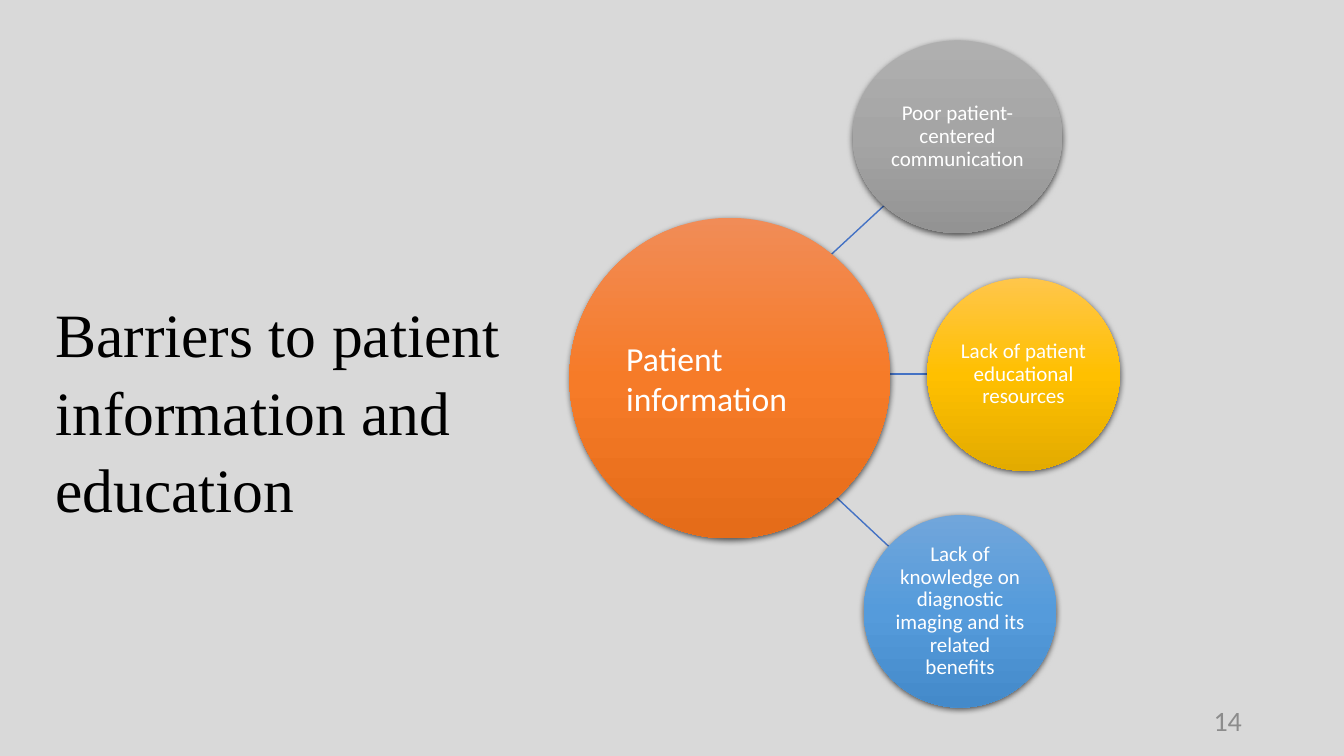
from lxml import etree
from pptx import Presentation
from pptx.dml.color import RGBColor
from pptx.enum import shapes, text
from pptx.oxml import parse_xml
from pptx.oxml.ns import nsdecls, qn
from pptx.util import Cm, Pt

GROUND = RGBColor(0xD9, 0xD9, 0xD9)
BLACK = RGBColor(0, 0, 0)
WHITE = RGBColor(0xFF, 0xFF, 0xFF)
GREY = RGBColor(0x8C, 0x8C, 0x8C)
BLUE = RGBColor(0x44, 0x72, 0xC4)
ORANGE_RAMP = (RGBColor(0xF1, 0x8C, 0x57), RGBColor(0xF6, 0x7B, 0x28), RGBColor(0xE5, 0x6C, 0x19))
GREY_RAMP = (RGBColor(0xAF, 0xAF, 0xAF), RGBColor(0xA5, 0xA5, 0xA5), RGBColor(0x93, 0x93, 0x93))
GOLD_RAMP = (RGBColor(0xFF, 0xC6, 0x4B), RGBColor(0xFF, 0xC0, 0x00), RGBColor(0xE3, 0xAB, 0x00))
BLUE_RAMP = (RGBColor(0x71, 0xA6, 0xDB), RGBColor(0x55, 0x9B, 0xDB), RGBColor(0x44, 0x8A, 0xCA))

HUB = (14.35, 5.49, 8.08, 8.08)
LINKS = [
    (20.55, 12.04, 22.4, 13.77),
    (20.55, 9.42, 23.37, 9.42),
    (20.55, 6.78, 22.28, 5.18),
]
SPOKES = [
    ((21.49, 1.02, 5.28, 4.85), GREY_RAMP, "Poor patient-centered communication"),
    ((23.37, 7.01, 4.85, 4.85), GOLD_RAMP, "Lack of patient educational resources"),
    ((21.77, 12.98, 4.85, 4.85), BLUE_RAMP,
     "Lack of knowledge on diagnostic imaging and its related benefits"),
]


def lengths(box):
    """Turn centimetre numbers into lengths."""
    return [Cm(n) for n in box]


def write(frame, words, size, color, align, face="Calibri"):
    """Set one styled paragraph in a text frame and return it."""
    frame.word_wrap = True
    para = frame.paragraphs[0]
    para.text = words
    para.alignment = align
    para.font.size = Pt(size)
    para.font.name = face
    para.font.color.rgb = color
    return para


def shade(shape, ramp):
    """Give a shape a downward three-stop gradient and a soft shadow."""
    stops = "".join(
        f'<a:gs pos="{i * 50000}"><a:srgbClr val="{color}"/></a:gs>'
        for i, color in enumerate(ramp))
    fill = parse_xml(
        f'<a:gradFill {nsdecls("a")} rotWithShape="1"><a:gsLst>{stops}</a:gsLst>'
        '<a:lin ang="5400000" scaled="0"/></a:gradFill>')
    glow = parse_xml(
        f'<a:effectLst {nsdecls("a")}><a:outerShdw blurRad="{Pt(4.5)}" dist="{Pt(1.5)}" '
        'dir="5400000" algn="ctr" rotWithShape="0"><a:srgbClr val="000000">'
        '<a:alpha val="63000"/></a:srgbClr></a:outerShdw></a:effectLst>')
    shape.line.fill.background()
    props = shape.element.spPr
    props.find(qn("a:prstGeom")).addnext(fill)
    props.append(glow)


def add_disc(slide, box, ramp):
    """Add a shaded ellipse and return its text frame."""
    disc = slide.shapes.add_shape(shapes.MSO_SHAPE.OVAL, *lengths(box))
    shade(disc, ramp)
    frame = disc.text_frame
    frame.vertical_anchor = text.MSO_ANCHOR.MIDDLE
    return frame


def add_hub(slide):
    """Add the large central disc."""
    write(add_disc(slide, HUB, ORANGE_RAMP), "Patient information", 24, WHITE,
          text.PP_ALIGN.LEFT)


def add_spoke(slide, box, ramp, words):
    """Add a small disc naming one barrier."""
    frame = add_disc(slide, box, ramp)
    frame.margin_left = frame.margin_right = Cm(0.03)
    frame.margin_top = frame.margin_bottom = Cm(0.03)
    para = write(frame, words, 15, WHITE, text.PP_ALIGN.CENTER)
    para.line_spacing = 0.9
    para.space_after = Pt(5.25)


def add_link(slide, ends):
    """Add a thin line from the hub to a spoke."""
    link = slide.shapes.add_connector(shapes.MSO_CONNECTOR.STRAIGHT, *lengths(ends))
    link.line.color.rgb = BLUE
    link.line.width = Pt(1)
    etree.SubElement(link.element.spPr, qn("a:effectLst"))


def set_title(slide):
    """Place and style the slide title."""
    title = slide.shapes.title
    title.left, title.top, title.width, title.height = lengths((1.14, 7.24, 13.36, 5.89))
    frame = title.text_frame
    frame.auto_size = text.MSO_AUTO_SIZE.NONE
    frame.vertical_anchor = text.MSO_ANCHOR.TOP
    para = write(frame, "Barriers to patient information and education", 44, BLACK,
                 text.PP_ALIGN.LEFT, "Times New Roman")
    para.line_spacing = 1.05


def add_number(slide):
    """Add the page number at the lower right."""
    box = slide.shapes.add_textbox(*lengths((23.93, 17.65, 7.62, 1.02)))
    box.text_frame.vertical_anchor = text.MSO_ANCHOR.MIDDLE
    write(box.text_frame, "14", 20, GREY, text.PP_ALIGN.RIGHT)


def main():
    """Build the slide and save it."""
    deck = Presentation()
    deck.slide_width, deck.slide_height = lengths((33.87, 19.05))
    slide = deck.slides.add_slide(deck.slide_layouts[5])
    slide.background.fill.solid()
    slide.background.fill.fore_color.rgb = GROUND
    set_title(slide)
    for ends in LINKS:
        add_link(slide, ends)
    add_hub(slide)
    for box, ramp, words in SPOKES:
        add_spoke(slide, box, ramp, words)
    add_number(slide)
    deck.save("out.pptx")


if __name__ == "__main__":
    main()
